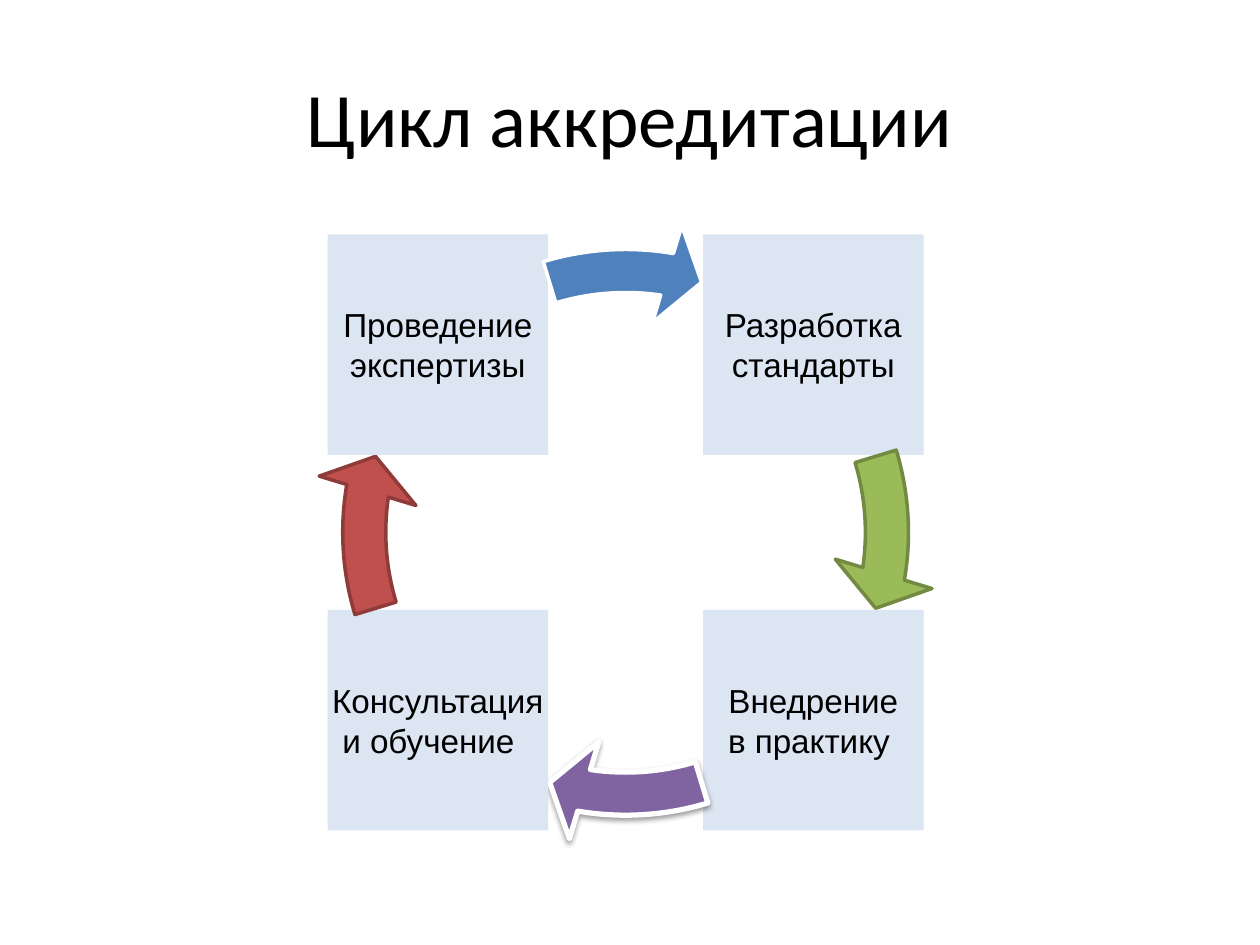
from lxml import etree
from pptx import Presentation
from pptx.dml.color import RGBColor
from pptx.enum.shapes import MSO_SHAPE
from pptx.enum.text import MSO_ANCHOR, PP_ALIGN
from pptx.oxml.ns import qn
from pptx.util import Inches, Pt

BLACK = RGBColor(0x00, 0x00, 0x00)
WHITE = RGBColor(0xFF, 0xFF, 0xFF)
PALE_BLUE = RGBColor(0xDC, 0xE6, 0xF2)
GREEN = RGBColor(0x9B, 0xBB, 0x59)
DARK_GREEN = RGBColor(0x73, 0x8A, 0x42)
PURPLE = RGBColor(0x80, 0x64, 0xA2)
RED = RGBColor(0xC0, 0x50, 0x4D)
DARK_RED = RGBColor(0x8E, 0x3B, 0x39)
BLUE = RGBColor(0x4F, 0x81, 0xBD)

LEFT, RIGHT, TOP, BOTTOM = 2.6, 5.58, 1.86, 4.84
BOX_SIZE = 1.75
RING_LEFT, RING_TOP, RING_SIZE = 2.49, 1.75, 4.95

# Angles in adjustment units: a full circle is 216, a quarter is 54
FULL_TURN, QUARTER_TURN = 216, 54
HEAD_ANGLE, TAIL_ANGLE = 5.484, 205.86

# Clockwise from the top right: left, top, lines of (text, right indent)
STAGES = [
    (RIGHT, TOP, [("Разработка стандарты", 0)]),
    (RIGHT, BOTTOM, [("Внедрение", 0), ("в практику", 0.07)]),
    (LEFT, BOTTOM, [("Консультация", 0), ("и обучение", 0.15)]),
    (LEFT, TOP, [("Проведение экспертизы", 0)]),
]
# Fill, outline, outline width, shadow
ARROWS = [
    (GREEN, DARK_GREEN, 2, False),
    (PURPLE, WHITE, 3, True),
    (RED, DARK_RED, 2, False),
    (BLUE, WHITE, 2, False),
]


def add_paragraph(paragraph, text, font_name, size, right_indent=0):
    paragraph.alignment = PP_ALIGN.CENTER
    if right_indent:
        paragraph._p.get_or_add_pPr().set("marR", str(Inches(right_indent)))
    run = paragraph.add_run()
    run.text = text
    run.font.name = font_name
    run.font.size = Pt(size)
    run.font.color.rgb = BLACK


def add_title(slide, text):
    box = slide.shapes.add_textbox(Inches(0.5), Inches(0.3), Inches(9), Inches(1.25))
    frame = box.text_frame
    frame.word_wrap = True
    frame.vertical_anchor = MSO_ANCHOR.MIDDLE
    add_paragraph(frame.paragraphs[0], text, "Calibri", 44)


def add_stage(slide, left, top, lines):
    shape = slide.shapes.add_shape(
        MSO_SHAPE.RECTANGLE, Inches(left), Inches(top), Inches(BOX_SIZE), Inches(BOX_SIZE))
    shape.shadow.inherit = False
    shape.fill.solid()
    shape.fill.fore_color.rgb = PALE_BLUE
    shape.line.fill.background()
    frame = shape.text_frame
    frame.word_wrap = True
    frame.vertical_anchor = MSO_ANCHOR.MIDDLE
    frame.margin_left = frame.margin_right = Inches(0.03)
    frame.margin_top = frame.margin_bottom = Inches(0.03)
    for index, (text, right_indent) in enumerate(lines):
        paragraph = frame.add_paragraph() if index else frame.paragraphs[0]
        add_paragraph(paragraph, text, "Arial", 19, right_indent)


def add_drop_shadow(shape):
    effects = shape._element.spPr.find(qn("a:effectLst"))
    shadow = etree.SubElement(
        effects, qn("a:outerShdw"), blurRad=str(Pt(3.1)), dist=str(Pt(1.6)),
        dir="5400000", rotWithShape="0")
    color = etree.SubElement(shadow, qn("a:srgbClr"), val=str(BLACK))
    etree.SubElement(color, qn("a:alpha"), val="38000")


def add_cycle_arrow(slide, quarter, fill, outline, width, has_shadow):
    shape = slide.shapes.add_shape(
        MSO_SHAPE.CIRCULAR_ARROW, Inches(RING_LEFT), Inches(RING_TOP),
        Inches(RING_SIZE), Inches(RING_SIZE))
    turn = quarter * QUARTER_TURN
    values = (0.069, 4.656, HEAD_ANGLE + turn, (TAIL_ANGLE + turn) % FULL_TURN, 0.081)
    for index, value in enumerate(values):
        shape.adjustments[index] = value
    shape.fill.solid()
    shape.fill.fore_color.rgb = fill
    shape.line.color.rgb = outline
    shape.line.width = Pt(width)
    shape.shadow.inherit = False
    if has_shadow:
        add_drop_shadow(shape)


def main():
    presentation = Presentation()
    presentation.slide_width = Inches(10)
    presentation.slide_height = Inches(7.5)
    slide = presentation.slides.add_slide(presentation.slide_layouts[6])

    add_title(slide, "Цикл аккредитации")

    # Each stage is followed by the arrow to the next one
    for quarter, (stage, arrow) in enumerate(zip(STAGES, ARROWS)):
        add_stage(slide, *stage)
        add_cycle_arrow(slide, quarter, *arrow)

    presentation.save("out.pptx")


if __name__ == "__main__":
    main()
